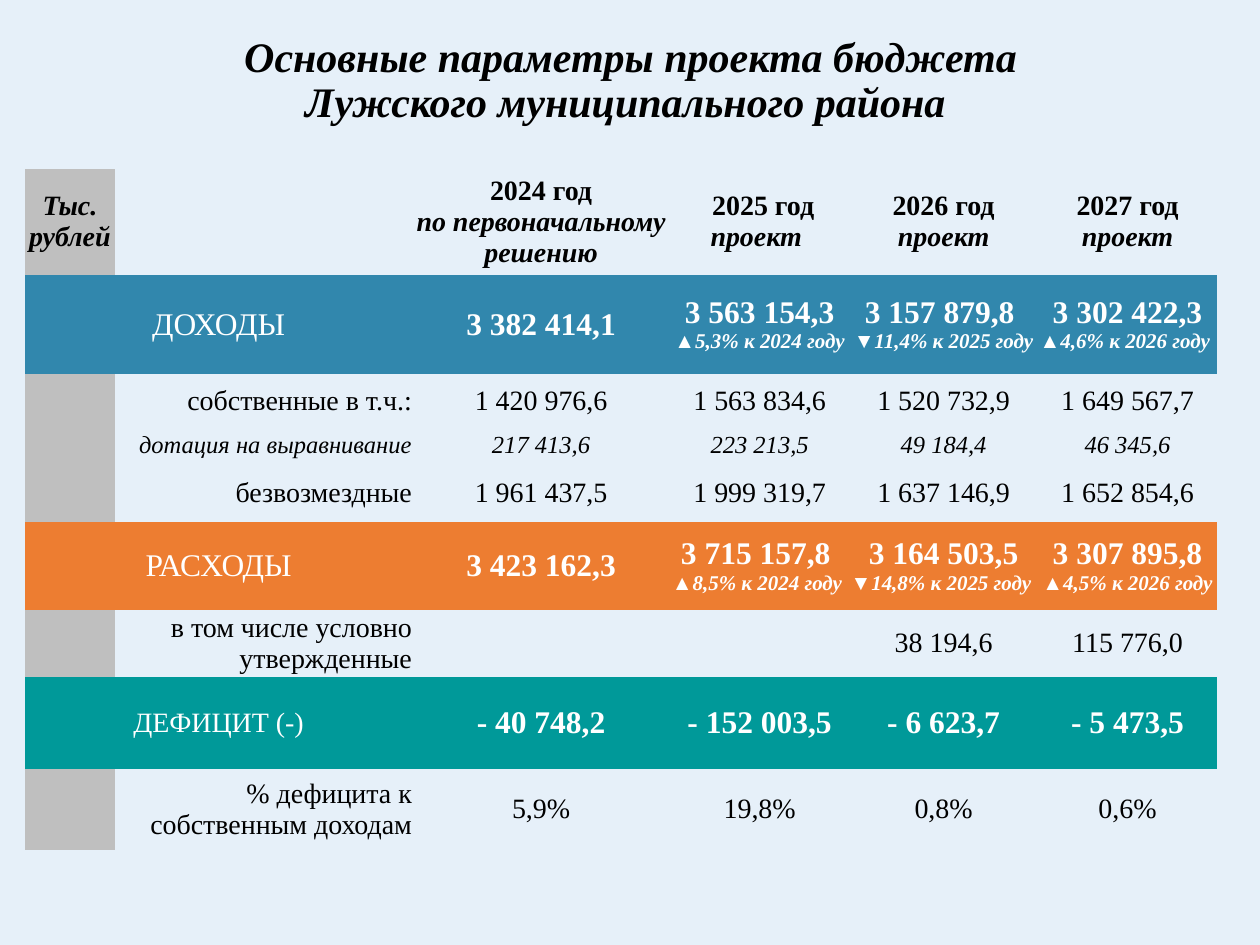
from pptx import Presentation
from pptx.dml.color import RGBColor
from pptx.enum import text
from pptx.util import Inches, Pt

FONT = "Times New Roman"
BLACK, WHITE, GREY = "000000", "FFFFFF", "BFBFBF"
BLUE, ORANGE, TEAL = "3187AD", "ED7D31", "009999"
TITLE = [" Основные параметры проекта бюджета ", "Лужского муниципального района "]
COLUMNS = [0.71, 2.36, 2.05, 1.42, 1.5, 1.42]
HEADER = ["2024 год\nпо первоначальному решению", " 2025 год\nпроект ",
          "2026 год\nпроект", "2027 год\nпроект"]
# height, band colour, label, label size, value size, italic, values
ROWS = [
    (0.79, BLUE, "ДОХОДЫ", 18, 18, False,
     ["3 382 414,1", "3 563 154,3\n▲5,3% к 2024 году",
      "3 157 879,8 \n▼11,4% к 2025 году", "3 302 422,3\n▲4,6% к 2026 году "]),
    (0.42, None, "собственные в т.ч.:", 16, 16, False,
     ["1 420 976,6", "1 563 834,6", "1 520 732,9", "1 649 567,7"]),
    (0.29, None, "дотация на выравнивание", 14, 14, True,
     ["217 413,6", "223 213,5", "49 184,4", "46 345,6"]),
    (0.46, None, "безвозмездные", 16, 16, False,
     ["1 961 437,5", "1 999 319,7", "1 637 146,9", "1 652 854,6"]),
    (0.7, ORANGE, "РАСХОДЫ", 18, 18, False,
     ["3 423 162,3", "3 715 157,8 \n▲8,5% к 2024 году  ",
      "3 164 503,5\n▼14,8% к 2025 году ", "3 307 895,8\n▲4,5% к 2026 году"]),
    (0.46, None, "в том числе условно утвержденные", 16, 16, False,
     ["", "", "38 194,6", "115 776,0"]),
    (0.73, TEAL, "ДЕФИЦИТ (-)", 16, 18, False,
     ["- 40 748,2", "- 152 003,5", "- 6 623,7", "- 5 473,5"]),
    (0.64, None, "% дефицита к собственным доходам", 16, 16, False,
     ["5,9%", "19,8%", "0,8%", "0,6%"]),
]
HEADER_HEIGHT = 0.84
NO_GRID_STYLE = "{2D5ABB26-0587-4C30-8999-92F81FD0307C}"


def rgb(value):
    return RGBColor.from_string(value)


def add_run(p, line, size, color=BLACK, bold=False, italic=False):
    r = p.add_run()
    r.text = line
    f = r.font
    f.name, f.size, f.bold, f.italic = FONT, Pt(size), bold, italic
    f.color.rgb = rgb(color)


def write(cell, content, size, color=BLACK, bold=False, italic=False,
          align=text.PP_ALIGN.CENTER, second_size=12):
    tf = cell.text_frame
    for i, line in enumerate(content.split("\n")):
        p = tf.add_paragraph() if i else tf.paragraphs[0]
        p.alignment = align
        add_run(p, line, second_size if i else size, color, bold, italic or i > 0)


def add_title(s):
    box = s.shapes.add_textbox(Inches(0.2), Inches(0.21), Inches(9.61), Inches(0.87))
    tf = box.text_frame
    tf.word_wrap = True
    tf.vertical_anchor = text.MSO_ANCHOR.MIDDLE
    p = tf.paragraphs[0]
    p.alignment = text.PP_ALIGN.CENTER
    p.line_spacing = 0.9
    for i, line in enumerate(TITLE):
        if i:
            p.add_line_break()
        add_run(p, line, 24, bold=True, italic=True)


def add_budget_table(s):
    heights = [HEADER_HEIGHT] + [row[0] for row in ROWS]
    frame = s.shapes.add_table(len(heights), len(COLUMNS), Inches(0.2), Inches(1.34),
                               Inches(sum(COLUMNS)), Inches(sum(heights)))
    table = frame.table
    table.first_row = table.horz_banding = False
    table._tbl.tblPr.find("{*}tableStyleId").text = NO_GRID_STYLE
    for column, width in zip(table.columns, COLUMNS):
        column.width = Inches(width)
    for row, height in zip(table.rows, heights):
        row.height = Inches(height)

    bands = [None] + [row[1] for row in ROWS]
    for i, band in enumerate(bands):
        for j in range(len(COLUMNS)):
            cell = table.cell(i, j)
            cell.margin_left = cell.margin_right = cell.margin_top = cell.margin_bottom = 0
            cell.vertical_anchor = text.MSO_ANCHOR.MIDDLE
            cell.text_frame.paragraphs[0]._p.get_or_add_endParaRPr().set("sz", "1200")
            color = band or (GREY if j == 0 else None)
            if color:
                cell.fill.solid()
                cell.fill.fore_color.rgb = rgb(color)
            else:
                cell.fill.background()

    write(table.cell(0, 0), "Тыс. рублей", 16, bold=True, italic=True)
    for j, heading in enumerate(HEADER, 2):
        write(table.cell(0, j), heading, 16, bold=True, second_size=16)
    for i, (_, band, label, label_size, size, italic, values) in enumerate(ROWS, 1):
        color = WHITE if band else BLACK
        if band:
            table.cell(i, 0).merge(table.cell(i, 1))
            write(table.cell(i, 0), label, label_size, color)
        else:
            write(table.cell(i, 1), label, label_size, italic=italic,
                  align=text.PP_ALIGN.RIGHT)
        for j, value in enumerate(values, 2):
            if value:
                write(table.cell(i, j), value, size, color, bool(band), italic)


def main():
    prs = Presentation()
    prs.slide_width, prs.slide_height = Inches(10), Inches(7.5)
    s = prs.slides.add_slide(prs.slide_layouts[6])
    s.background.fill.solid()
    s.background.fill.fore_color.rgb = rgb("E6F0F9")
    add_title(s)
    add_budget_table(s)
    prs.save("out.pptx")


if __name__ == "__main__":
    main()
